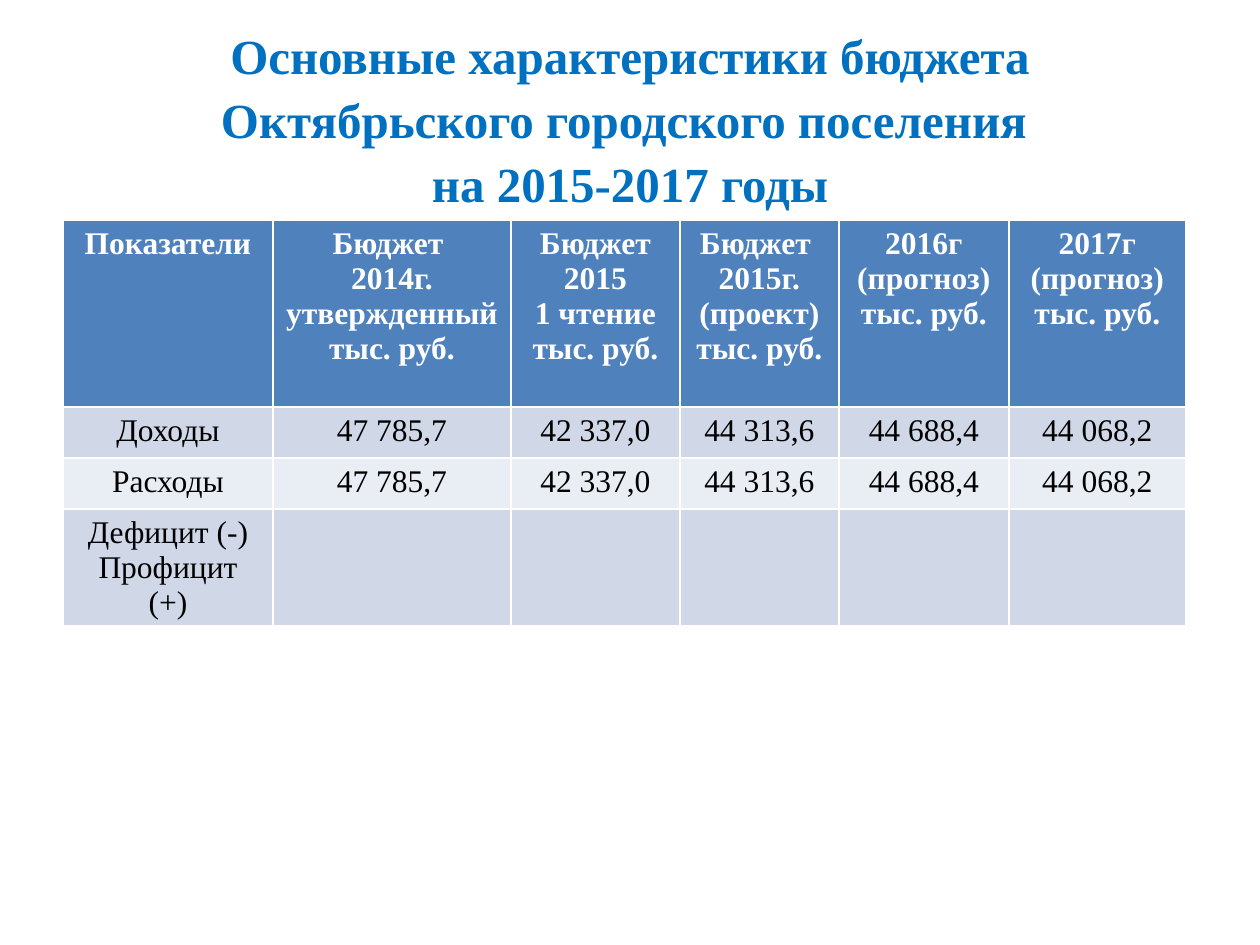
import pptx
import pptx.util
import pptx.dml.color
import pptx.enum.text

PX = 914400 / 126
COLORS = {
    "title": "0070C0",
    "header": "4F81BD",
    "header_text": "FFFFFF",
    "band_dark": "D0D8E8",
    "band_light": "E9EDF4",
    "text": "000000",
}


def px(length):
    return pptx.util.Emu(round(length * PX))


def write(frame, text, size=18, color="text", bold=False, spacing=None):
    frame.text = text
    for paragraph in frame.paragraphs:
        paragraph.alignment = pptx.enum.text.PP_ALIGN.CENTER
        paragraph.line_spacing = spacing
        for run in paragraph.runs:
            run.font.name = "Times New Roman"
            run.font.size = pptx.util.Pt(size)
            run.font.bold = bold
            run.font.color.rgb = pptx.dml.color.RGBColor.from_string(COLORS[color])


presentation = pptx.Presentation()
presentation.slide_width = px(1260)
presentation.slide_height = px(945)
slide = presentation.slides.add_slide(presentation.slide_layouts[5])

heading = slide.shapes.title
heading.left, heading.top, heading.width, heading.height = px(63), px(38), px(1134), px(157)
heading.text_frame.vertical_anchor = pptx.enum.text.MSO_ANCHOR.MIDDLE
write(
    heading.text_frame,
    "Основные характеристики бюджета Октябрьского городского поселения \vна 2015-2017 годы",
    size=28, color="title", bold=True, spacing=1.09,
)

budget_rows = [
    ["Показатели", "Бюджет \n2014г.\nутвержденный\nтыс. руб.",
     "Бюджет\n2015\n1 чтение\nтыс. руб.", "Бюджет \n2015г.\n(проект)\nтыс. руб.",
     "2016г\n(прогноз)\nтыс. руб.", "2017г\n(прогноз)\nтыс. руб."],
    ["Доходы", "47 785,7", "42 337,0", "44 313,6", "44 688,4", "44 068,2"],
    ["Расходы", "47 785,7", "42 337,0", "44 313,6", "44 688,4", "44 068,2"],
    ["Дефицит (-)\nПрофицит (+)", "", "", "", "", ""],
]
column_widths = [210, 238, 169, 159, 170, 177]
row_heights = [187, 51, 51, 117]
row_fills = ["header", "band_dark", "band_light", "band_dark"]

budget = slide.shapes.add_table(
    len(budget_rows), len(column_widths),
    px(63), px(220), px(sum(column_widths)), px(sum(row_heights)),
).table
for column, width in zip(budget.columns, column_widths):
    column.width = px(width)

for row, height, fill, texts in zip(budget.rows, row_heights, row_fills, budget_rows):
    row.height = px(height)
    is_header = fill == "header"
    for cell, text in zip(row.cells, texts):
        cell.fill.solid()
        cell.fill.fore_color.rgb = pptx.dml.color.RGBColor.from_string(COLORS[fill])
        write(cell.text_frame, text, color="header_text" if is_header else "text", bold=is_header)

presentation.save("out.pptx")
